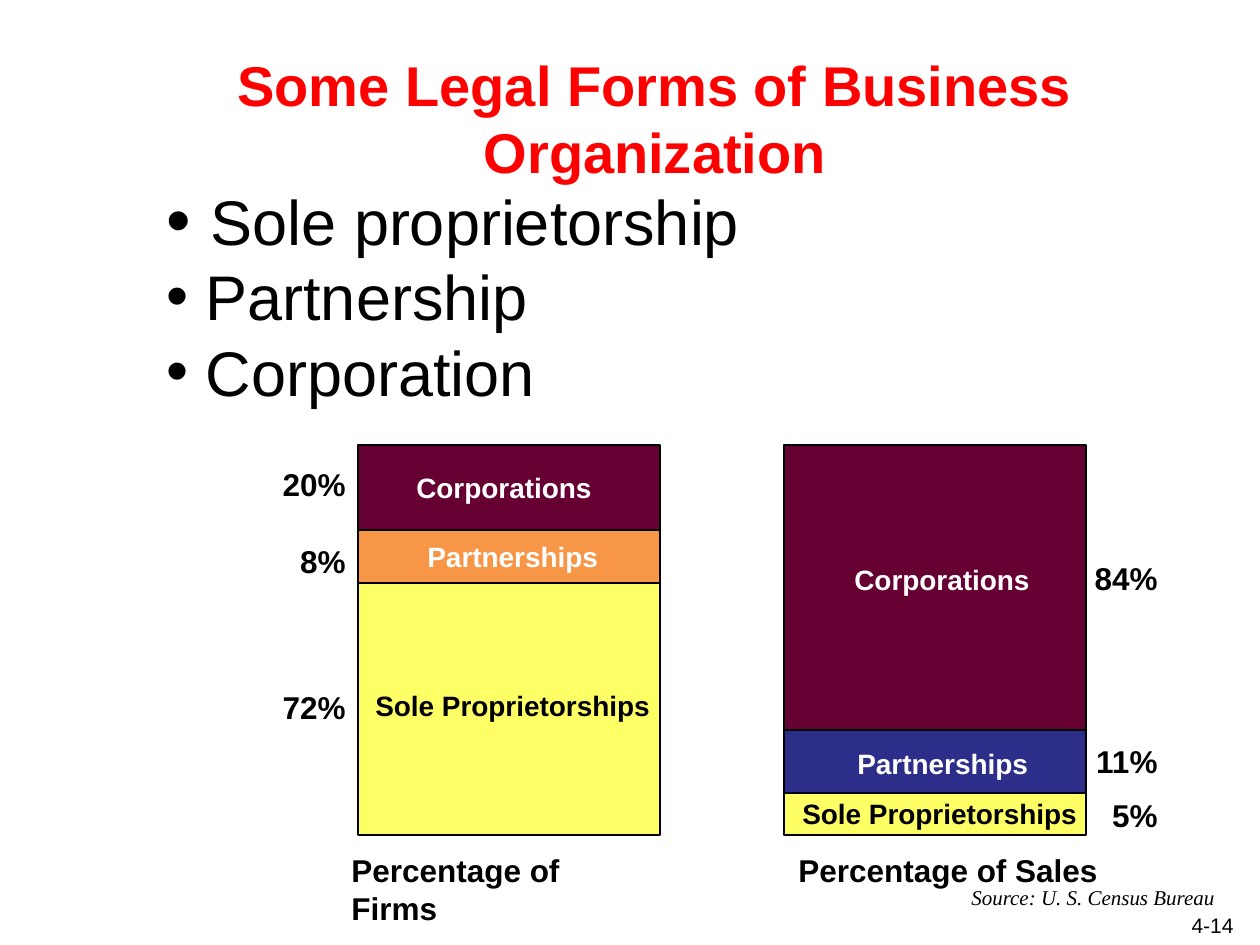
import dataclasses

import pptx
import pptx.dml.color
import pptx.enum.shapes
import pptx.enum.text
import pptx.util
from lxml import etree

ALIGN = pptx.enum.text.PP_ALIGN
ANCHOR = pptx.enum.text.MSO_ANCHOR


@dataclasses.dataclass(frozen=True)
class Theme:
    font: str = "Arial"
    source_font: str = "Times New Roman"
    title_color: str = "FF0000"
    dark: str = "000000"
    light: str = "FFFFFF"
    maroon: str = "660033"
    orange: str = "F79646"
    navy: str = "2D2D8A"
    yellow: str = "FFFF66"
    title: int = 32
    body: int = 36
    value: int = 18
    label: int = 16
    small: int = 12


THEME = Theme()


def px(n):
    """Length in pixels, 126 to the inch, as EMU."""
    return round(n * 914400 / 126)


def rgb(color):
    return pptx.dml.color.RGBColor.from_string(color)


def place(sp, box):
    sp.left, sp.top, sp.width, sp.height = (px(n) for n in box)


def style(p, size, color=THEME.dark, bold=False, italic=False, font=THEME.font, align=ALIGN.LEFT):
    p.font.name, p.font.size = font, pptx.util.Pt(size)
    p.font.bold, p.font.italic = bold, italic
    p.font.color.rgb = rgb(color)
    p.alignment = align


def add_text(slide, box, text, size, **kw):
    tf = slide.shapes.add_textbox(*(px(n) for n in box)).text_frame
    tf.word_wrap = False
    tf.text = text
    style(tf.paragraphs[0], size, **kw)


def add_title(slide, box, text):
    sp = slide.shapes.title
    place(sp, box)
    tf = sp.text_frame
    tf.text = text
    tf.vertical_anchor = ANCHOR.MIDDLE
    style(tf.paragraphs[0], THEME.title, THEME.title_color, bold=True, align=ALIGN.CENTER)


def add_list(slide, box, items):
    sp = slide.placeholders[1]
    place(sp, box)
    tf = sp.text_frame
    tf.text = "\n".join(items)
    tf.margin_top = px(15)
    tf.vertical_anchor = ANCHOR.TOP
    for i, p in enumerate(tf.paragraphs):
        style(p, THEME.body)
        p.line_spacing = pptx.util.Pt(43)
        p.space_before = pptx.util.Pt(0)
        # Hanging bullet; the first one is slightly larger
        indent = 39 if i else 44
        pPr = p._p.get_or_add_pPr()
        pPr.set("marL", str(px(indent)))
        pPr.set("indent", str(-px(indent)))
        ns = "{http://schemas.openxmlformats.org/drawingml/2006/main}"
        size = etree.Element(ns + "buSzPct", val="100000" if i else "111000")
        char = etree.Element(ns + "buChar", char="•")
        pPr.find(ns + "spcBef").addnext(size)
        size.addnext(char)


def add_bar(slide, box, segments, value_x, caption, caption_x):
    """Stack segments: name, share, fill, text colour, height, label x, label y, share y."""
    left, top, width, height = box
    y = top
    for name, share, fill, color, h, label_x, label_y, value_y in segments:
        sp = slide.shapes.add_shape(pptx.enum.shapes.MSO_SHAPE.RECTANGLE,
                                    px(left), px(y), px(width), px(h))
        sp.shadow.inherit = False
        sp.fill.solid()
        sp.fill.fore_color.rgb = rgb(fill)
        sp.line.color.rgb = rgb(THEME.dark)
        sp.line.width = pptx.util.Pt(0.75)
        label_w = {"Corporations": 202, "Partnerships": 197}.get(name, 301)
        add_text(slide, (left + label_x, y + label_y, label_w, 47), name,
                 THEME.label, color=color, bold=True)
        add_text(slide, (left + value_x, y + value_y, 88, 50), share,
                 THEME.value, bold=True, align=ALIGN.RIGHT)
        y += h
    add_text(slide, (left + caption_x, top + height + 10, 327, 50), caption,
             THEME.value, bold=True)


def add_footer(slide, box):
    left, top, width, height = box
    add_text(slide, (left, top, 271, 38), "Source: U. S. Census Bureau", THEME.small,
             italic=True, font=THEME.source_font)
    add_text(slide, (left, top + 28, width, height - 28), "4-14", THEME.small, align=ALIGN.RIGHT)


def main():
    t = THEME
    prs = pptx.Presentation()
    prs.slide_width, prs.slide_height = px(1260), px(945)
    slide = prs.slides.add_slide(prs.slide_layouts[1])

    # Heading and list
    add_title(slide, (63, 43, 1184, 149), "Some Legal Forms of Business Organization")
    add_list(slide, (154, 168, 751, 250), ["Sole proprietorship", "Partnership", "Corporation"])

    # Stacked bars
    add_bar(slide, (358, 445, 302, 390), [
        ("Corporations", "20%", t.maroon, t.light, 85, 46, 19, 14),
        ("Partnerships", "8%", t.orange, t.light, 53, 57, 3, 6),
        ("Sole Proprietorships", "72%", t.yellow, t.dark, 252, 5, 99, 99),
    ], -88, "Percentage of Firms", -19)
    add_bar(slide, (784, 445, 302, 390), [
        ("Corporations", "84%", t.maroon, t.light, 285, 58, 111, 108),
        ("Partnerships", "11%", t.navy, t.light, 63, 61, 10, 6),
        ("Sole Proprietorships", "5%", t.yellow, t.dark, 42, 6, -3, -3),
    ], 298, "Percentage of Sales", 2)

    # Source and slide number
    add_footer(slide, (959, 878, 287, 62))
    prs.save("out.pptx")


if __name__ == "__main__":
    main()
